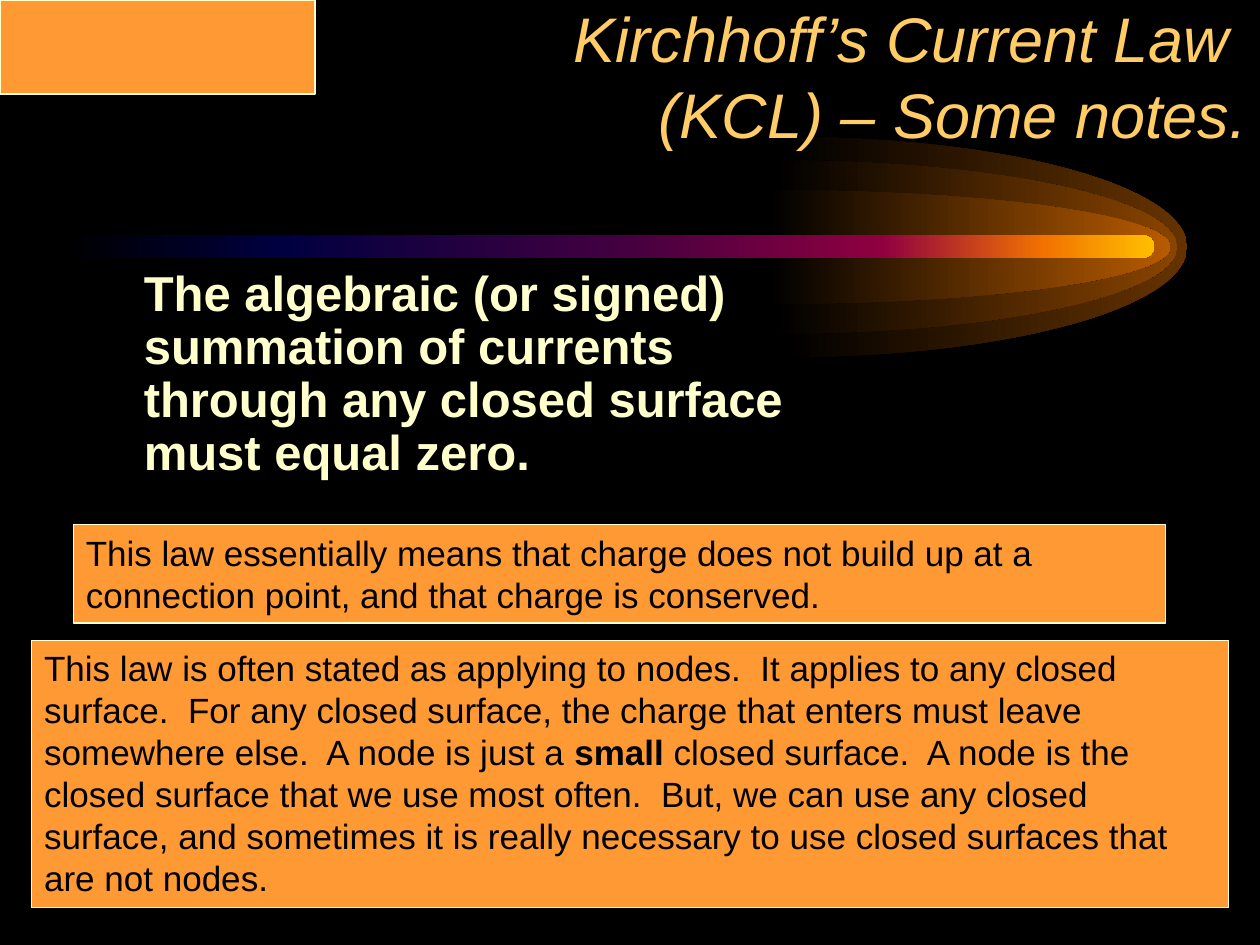
from lxml.etree import SubElement
from pptx import Presentation
from pptx.dml.color import RGBColor
from pptx.enum.shapes import MSO_SHAPE
from pptx.enum.text import MSO_ANCHOR, MSO_AUTO_SIZE, PP_ALIGN
from pptx.oxml.ns import qn
from pptx.util import Cm, Pt

BLACK, ORANGE, CREAM, GOLD = "000000", "FF9933", "FFFFCC", "FFCC66"
ARC = 0.55


def rgb(value):
    """Turn a hex string into a colour."""
    return RGBColor.from_string(value)


def add_run(p, text, size, color, bold=False, italic=False):
    """Append one run of Arial text to a paragraph."""
    r = p.add_run()
    r.text = text
    font = r.font
    font.name, font.size, font.bold, font.italic = "Arial", Pt(size), bold, italic
    font.color.rgb = rgb(color)


def set_gradient(sp, stops):
    """Fill a shape from left to right with (percent, colour) stops."""
    sp.shadow.inherit = False
    sp.line.fill.background()
    sp.fill.gradient()
    sp.fill.gradient_angle = 0
    gs_list = sp._element.spPr.find(qn("a:gradFill")).find(qn("a:gsLst"))
    for gs in list(gs_list):
        gs_list.remove(gs)
    for percent, color in stops:
        gs = SubElement(gs_list, qn("a:gs"), pos=str(percent * 1000))
        SubElement(gs, qn("a:srgbClr"), val=color)


def bend(segment, points):
    """Turn a straight segment into a cubic curve through three points."""
    segment.tag = qn("a:cubicBezTo")
    for pt in list(segment):
        segment.remove(pt)
    for x, y in points:
        SubElement(segment, qn("a:pt"), x=str(int(x)), y=str(int(y)))


def add_glow(s, x, cy, rx, ry, color):
    """Draw the right half of an ellipse that fades to black."""
    x, cy, rx, ry = Cm(x), Cm(cy), Cm(rx), Cm(ry)
    builder = s.shapes.build_freeform(x, cy - ry)
    builder.add_line_segments([(x + rx, cy), (x, cy + ry)], close=True)
    sp = builder.convert_to_shape()
    upper, lower = list(sp._element.iter(qn("a:lnTo")))
    bend(upper, [(rx * ARC, 0), (rx, ry * (1 - ARC)), (rx, ry)])
    bend(lower, [(rx, ry * (1 + ARC)), (rx * ARC, 2 * ry), (0, 2 * ry)])
    set_gradient(sp, [(0, BLACK), (100, color)])


def add_comet(s):
    """Draw the three glows and the coloured tail."""
    for x, ry, color in ((15.85, 2.22, "663300"), (15.65, 1.75, "894400"),
                         (15.52, 1.15, "B75B00")):
        add_glow(s, x, 4.98, 8.08, ry, color)
    sp = s.shapes.add_shape(MSO_SHAPE.ROUNDED_RECTANGLE,
                            Cm(1.27), Cm(4.74), Cm(22), Cm(0.46))
    sp.adjustments[0] = 0.5
    set_gradient(sp, [(0, BLACK), (20, "000040"), (50, "400040"),
                      (75, "8F0040"), (90, "F27300"), (100, "FFBF00")])


def add_panel(s, x, y, w, h, line_width):
    """Draw an orange rectangle with a cream outline."""
    sp = s.shapes.add_shape(MSO_SHAPE.RECTANGLE, Cm(x), Cm(y), Cm(w), Cm(h))
    sp.shadow.inherit = False
    sp.fill.solid()
    sp.fill.fore_color.rgb = rgb(ORANGE)
    sp.line.color.rgb = rgb(CREAM)
    sp.line.width = Pt(line_width)
    return sp


def add_note(s, x, y, w, h, parts):
    """Draw a panel holding (text, bold) parts."""
    tf = add_panel(s, x, y, w, h, 0.75).text_frame
    tf.word_wrap = True
    tf.auto_size = MSO_AUTO_SIZE.SHAPE_TO_FIT_TEXT
    tf.vertical_anchor = MSO_ANCHOR.TOP
    p = tf.paragraphs[0]
    p.alignment = PP_ALIGN.LEFT
    for text, bold in parts:
        add_run(p, text, 20, BLACK, bold)


def add_text(s, x, y, w, h, anchor):
    """Add a wrapping text box and return its first paragraph."""
    tf = s.shapes.add_textbox(Cm(x), Cm(y), Cm(w), Cm(h)).text_frame
    tf.word_wrap = True
    tf.vertical_anchor = anchor
    return tf.paragraphs[0]


def add_title(s):
    """Add the two-line title at the top right."""
    p = add_text(s, 3.81, 0, 21.58, 3.17, MSO_ANCHOR.BOTTOM)
    p.alignment = PP_ALIGN.RIGHT
    add_run(p, "Kirchhoff’s Current Law ", 36, GOLD, italic=True)
    p.add_line_break()
    add_run(p, "(KCL) – Some notes.", 36, GOLD, italic=True)


def add_statement(s):
    """Add the law itself with a hanging indent."""
    p = add_text(s, 1.7, 5.3, 15.04, 4.45, MSO_ANCHOR.TOP)
    p.line_spacing = 0.9
    pPr = p._p.get_or_add_pPr()
    pPr.set("marL", str(Cm(0.95)))
    pPr.set("indent", str(-Cm(0.95)))
    add_run(p, "\t", 24, CREAM)
    add_run(p, "The algebraic (or signed) summation of currents through any "
               "closed surface must equal zero.", 28, CREAM, bold=True)


def main():
    """Build the slide and save it."""
    prs = Presentation()
    prs.slide_width, prs.slide_height = Cm(25.4), Cm(19.05)
    s = prs.slides.add_slide(prs.slide_layouts[6])
    s.background.fill.solid()
    s.background.fill.fore_color.rgb = rgb(BLACK)
    add_panel(s, 0, 0, 6.35, 1.9, 1)
    add_comet(s)
    add_title(s)
    add_statement(s)
    add_note(s, 0.64, 12.91, 24.13, 5.38, [
        ("This law is often stated as applying to nodes.  It applies to any "
         "closed surface.  For any closed surface, the charge that enters must "
         "leave somewhere else.  A node is just a ", False),
        ("small", True),
        (" closed surface.  A node is the closed surface that we use most "
         "often.  But, we can use any closed surface, and sometimes it is "
         "really necessary to use closed surfaces that are not nodes.", False),
    ])
    add_note(s, 1.48, 10.58, 22.02, 1.98, [
        ("This law essentially means that charge does not build up at a "
         "connection point, and that charge is conserved.", False),
    ])
    prs.save("out.pptx")


if __name__ == "__main__":
    main()
